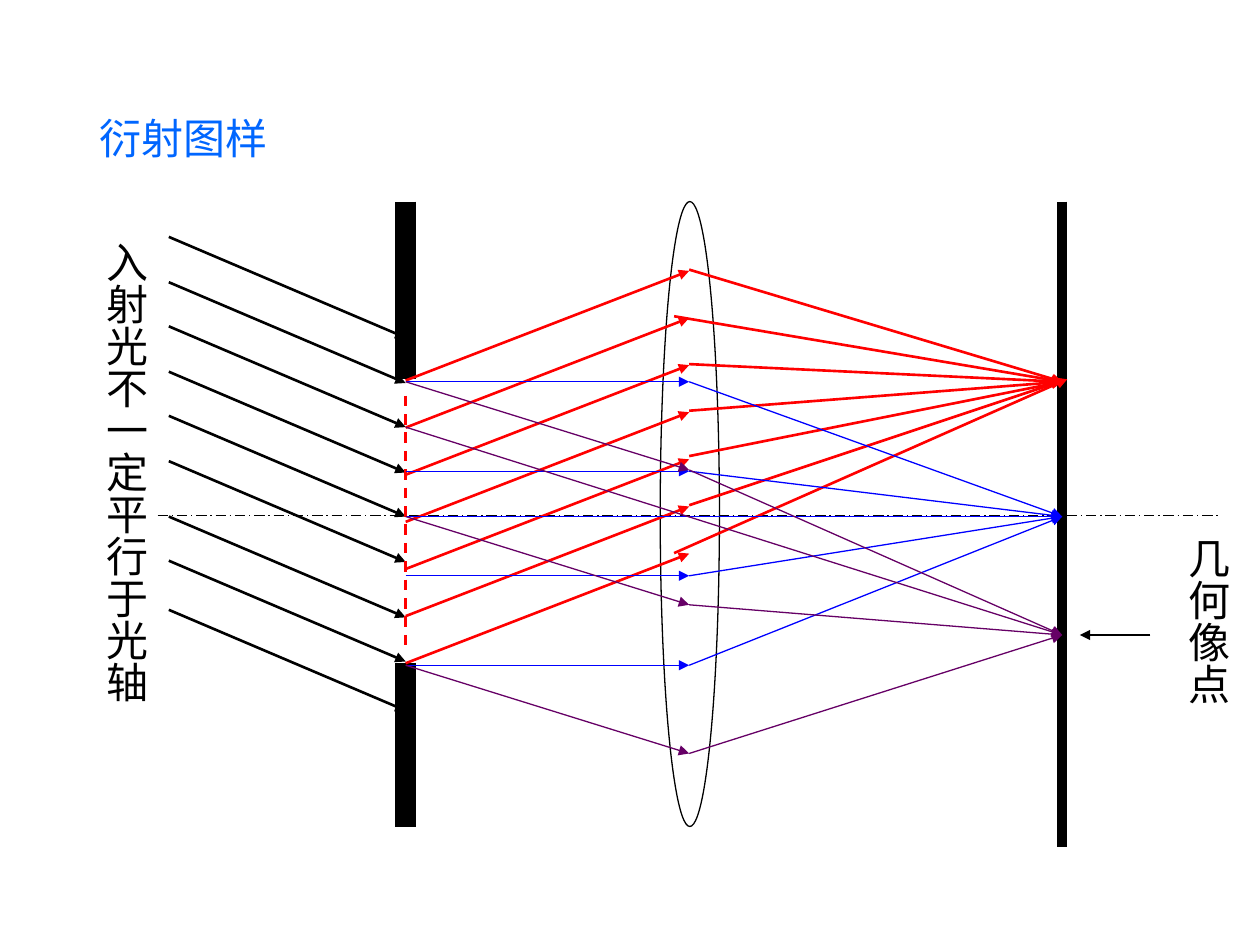
"""Build a slide showing how a slit and a lens form a diffraction pattern."""
import pptx
import pptx.dml.color
import pptx.enum.dml
import pptx.enum.shapes
import pptx.enum.text
import pptx.oxml.ns
import pptx.oxml.xmlchemy
import pptx.util

Inches = pptx.util.Inches
Pt = pptx.util.Pt
RGBColor = pptx.dml.color.RGBColor
DASH = pptx.enum.dml.MSO_LINE

BLACK = RGBColor(0x00, 0x00, 0x00)
WHITE = RGBColor(0xFF, 0xFF, 0xFF)
RED = RGBColor(0xFF, 0x00, 0x00)
BLUE = RGBColor(0x00, 0x00, 0xFF)
PURPLE = RGBColor(0x66, 0x00, 0x66)
TITLE_BLUE = RGBColor(0x00, 0x66, 0xFF)

SLIT_X, LENS_X, SCREEN_X = 3.22, 5.47, 8.43
AXIS_Y = 4.09
RED_FOCUS = (SCREEN_X, 3.03)
BLUE_FOCUS = (SCREEN_X, 4.1)
PURPLE_FOCUS = (SCREEN_X, 5.04)


class OpticsSlide:
    """Hold the diagram style and the slide being drawn."""

    thin, bold = 0.75, 1.5
    cjk_font = "Noto Sans CJK SC"
    text_size = 24

    def __init__(self, slide):
        """Keep the slide that receives the elements."""
        self.slide = slide

    def line(self, start, end, color=BLACK, width=thin, dash=None):
        """Draw a straight line without a shadow."""
        points = [Inches(v) for v in (*start, *end)]
        connector = self.slide.shapes.add_connector(
            pptx.enum.shapes.MSO_CONNECTOR.STRAIGHT, *points)
        connector.line.color.rgb = color
        connector.line.width = Pt(width)
        if dash is not None:
            connector.line.dash_style = dash
        properties = connector._element.spPr
        properties.append(pptx.oxml.xmlchemy.OxmlElement("a:effectLst"))
        return connector

    def ray(self, start, end, color=BLACK, width=thin):
        """Draw a line with a triangle head at its end."""
        outline = self.line(start, end, color, width).line._get_or_add_ln()
        head = pptx.oxml.xmlchemy.OxmlElement("a:tailEnd")
        head.set("type", "triangle")
        outline.append(head)

    def lens(self, left, top, width, height):
        """Draw the lens as a white ellipse."""
        lens = self.slide.shapes.add_shape(
            pptx.enum.shapes.MSO_SHAPE.OVAL,
            Inches(left), Inches(top), Inches(width), Inches(height))
        lens.shadow.inherit = False
        lens.fill.solid()
        lens.fill.fore_color.rgb = WHITE
        lens.line.color.rgb = BLACK
        lens.line.width = Pt(self.thin)

    def text(self, words, *, left, top, width, height,
             color=BLACK, font=cjk_font, vertical=False):
        """Write a horizontal or vertical label."""
        label = self.slide.shapes.add_textbox(
            Inches(left), Inches(top), Inches(width), Inches(height))
        frame = label.text_frame
        frame.word_wrap = False
        frame.auto_size = pptx.enum.text.MSO_AUTO_SIZE.SHAPE_TO_FIT_TEXT
        if vertical:
            frame._txBody.bodyPr.set("vert", "eaVert")
        run = frame.paragraphs[0].add_run()
        run.text = words
        run.font.size = Pt(self.text_size)
        run.font.name = font
        run.font.color.rgb = color
        east_asian = pptx.oxml.xmlchemy.OxmlElement("a:ea")
        east_asian.set("typeface", self.cjk_font)
        latin = run._r.rPr.find(pptx.oxml.ns.qn("a:latin"))
        latin.addnext(east_asian)


def draw_apparatus(diagram):
    """Draw the lens, optical axis, slit plates and screen."""
    diagram.lens(5.24, 1.6, 0.47, 4.96)
    diagram.line((1.25, AXIS_Y), (9.68, AXIS_Y), dash=DASH.LONG_DASH_DOT)
    for top, bottom in ((1.6, 3.01), (5.26, 6.56)):
        diagram.line((SLIT_X, top), (SLIT_X, bottom), width=12)
    diagram.line((SCREEN_X, 1.6), (SCREEN_X, 6.72), width=6)


def draw_incident_light(diagram):
    """Draw the parallel oblique rays that reach the slit."""
    for y in (1.88, 2.24, 2.59, 2.95, 3.3, 3.66, 4.1, 4.45, 4.84):
        diagram.ray((1.34, y), (SLIT_X, y + 0.8), width=diagram.bold)


def draw_red_rays(diagram):
    """Draw the red rays diffracted upwards and focused on the screen."""
    for step in range(7):
        y = 3.02 + 0.374 * step
        diagram.ray((SLIT_X, y), (LENS_X, y - 0.87), RED, diagram.bold)
    for start in ((5.35, 2.51), (LENS_X, 3.62), (LENS_X, 3.26),
                  (LENS_X, 2.89), (LENS_X, 2.14)):
        diagram.ray(start, RED_FOCUS, RED, diagram.bold)
    for start in ((5.35, 4.39), (LENS_X, 4.01)):
        diagram.ray(start, (8.47, 3.01), RED, diagram.bold)
    diagram.line((SLIT_X, 3.14), (SLIT_X, 5.14), RED, diagram.bold, DASH.DASH)


def draw_blue_rays(diagram):
    """Draw the blue rays that leave the slit parallel to the axis."""
    for y in (3.03, 3.74, 4.57, 5.28):
        diagram.ray((SLIT_X, y), (LENS_X, y), BLUE)
        diagram.ray((LENS_X, y), BLUE_FOCUS, BLUE)
    diagram.ray((SLIT_X, 4.1), BLUE_FOCUS, BLUE)


def draw_purple_rays(diagram):
    """Draw the purple rays that meet at the geometric image point."""
    diagram.ray((SLIT_X, 3.39), PURPLE_FOCUS, PURPLE)
    for y in (3.03, 4.1, 5.28):
        bend = (LENS_X, y + 0.7)
        diagram.ray((SLIT_X, y), bend, PURPLE)
        diagram.ray(bend, PURPLE_FOCUS, PURPLE)


def main():
    """Assemble and save the slide."""
    deck = pptx.Presentation()
    deck.slide_width, deck.slide_height = Inches(10), Inches(7.5)
    diagram = OpticsSlide(deck.slides.add_slide(deck.slide_layouts[6]))

    diagram.text("衍射图样", left=0.69, top=0.84, width=1.55, height=0.5,
                 color=TITLE_BLUE, font="Times New Roman")
    draw_apparatus(diagram)
    draw_incident_light(diagram)
    draw_red_rays(diagram)
    draw_blue_rays(diagram)
    draw_purple_rays(diagram)
    diagram.text("入射光不一定平行于光轴", left=0.64, top=1.82,
                 width=0.61, height=3.8, vertical=True)
    diagram.text("几何像点", left=9.23, top=4.17,
                 width=0.61, height=1.45, vertical=True)
    diagram.ray((9.13, 5.04), (8.57, 5.04))
    deck.save("out.pptx")


if __name__ == "__main__":
    main()
